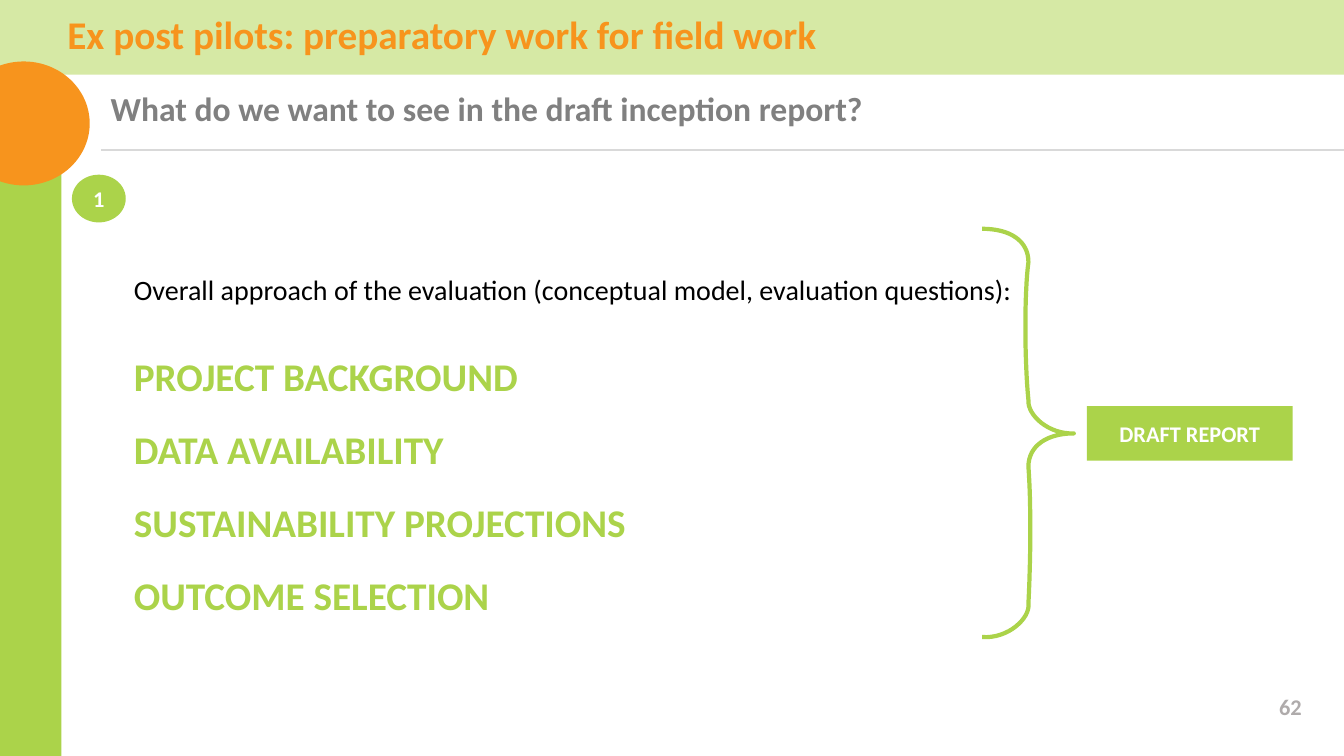
from lxml.etree import SubElement
from pptx import Presentation
from pptx.dml.color import RGBColor
from pptx.enum.shapes import MSO_CONNECTOR, MSO_SHAPE
from pptx.enum.text import MSO_ANCHOR, PP_ALIGN
from pptx.oxml.ns import qn
from pptx.util import Inches, Pt

GREEN, PALE_GREEN, ORANGE = "ABD34A", "D6E9A5", "F7941D"
GREY, LIGHT_GREY, RULE_GREY = "808080", "AFABAB", "D9D9D9"
WHITE, BLACK = "FFFFFF", "000000"
FONT = "Calibri"
SLIDE_WIDTH, SLIDE_HEIGHT = 13.33, 7.5

TITLE = "Ex post pilots: preparatory work for field work"
SUBTITLE = "What do we want to see in the draft inception report?"
APPROACH = "Overall approach of the evaluation (conceptual model, evaluation questions):"
TOPICS = [
    "PROJECT BACKGROUND",
    "DATA AVAILABILITY",
    "SUSTAINABILITY PROJECTIONS",
    "OUTCOME SELECTION",
]
FIRST_TOPIC_GAP, TOPIC_GAP = 33, 18.7

BRACE_START = (9.74, 2.27)
# Each Bezier curve: two control points, then the end point
BRACE_CURVES = [
    ((10.02, 2.27), (10.2, 2.39), (10.2, 2.6)),
    ((10.16, 2.9), (10.16, 3.56), (10.2, 3.97)),
    ((10.19, 4.12), (10.4, 4.31), (10.65, 4.3)),
    ((10.39, 4.3), (10.2, 4.42), (10.2, 4.63)),
    ((10.22, 4.89), (10.23, 5.39), (10.2, 5.99)),
    ((10.22, 6.13), (10, 6.34), (9.74, 6.32)),
]
CURVE_STEPS = 16


def color(hex_string):
    return RGBColor.from_string(hex_string)


def add_run(paragraph, text, size, text_color, bold=True):
    run = paragraph.add_run()
    run.text = text
    run.font.name = FONT
    run.font.size = Pt(size)
    run.font.bold = bold
    run.font.color.rgb = color(text_color)


def add_block(kind, left, top, width, height, fill, label=None):
    """Add a plain filled shape, with a centred white label if one is given."""
    shape = slide.shapes.add_shape(
        kind, Inches(left), Inches(top), Inches(width), Inches(height))
    shape.shadow.inherit = False
    shape.fill.solid()
    shape.fill.fore_color.rgb = color(fill)
    shape.line.fill.background()
    if label:
        shape.text_frame.vertical_anchor = MSO_ANCHOR.MIDDLE
        paragraph = shape.text_frame.paragraphs[0]
        paragraph.alignment = PP_ALIGN.CENTER
        add_run(paragraph, label, 16, WHITE)
    return shape


def add_text_frame(left, top, width, height):
    box = slide.shapes.add_textbox(
        Inches(left), Inches(top), Inches(width), Inches(height))
    box.text_frame.word_wrap = True
    return box.text_frame


def add_heading(text, size, text_color, *place):
    paragraph = add_text_frame(*place).paragraphs[0]
    paragraph.line_spacing = 0.9
    add_run(paragraph, text, size, text_color)


def curve_points(start, first, second, end):
    """Return points along a cubic Bezier curve, without its start."""
    points = []
    for step in range(1, CURVE_STEPS + 1):
        t = step / CURVE_STEPS
        weights = ((1 - t) ** 3, 3 * t * (1 - t) ** 2, 3 * t * t * (1 - t), t ** 3)
        points.append(tuple(
            Inches(sum(weight * value for weight, value in zip(weights, values)))
            for values in zip(start, first, second, end)))
    return points


def add_brace():
    builder = slide.shapes.build_freeform(*(Inches(value) for value in BRACE_START))
    start = BRACE_START
    for curve in BRACE_CURVES:
        builder.add_line_segments(curve_points(start, *curve), close=False)
        start = curve[-1]
    brace = builder.convert_to_shape()
    brace.shadow.inherit = False
    brace.fill.background()
    brace.line.color.rgb = color(GREEN)
    brace.line.width = Pt(3)


presentation = Presentation()
presentation.slide_width = Inches(SLIDE_WIDTH)
presentation.slide_height = Inches(SLIDE_HEIGHT)
slide = presentation.slides.add_slide(presentation.slide_layouts[6])

# Frame and headings
add_block(MSO_SHAPE.RECTANGLE, 0, 0, 0.61, SLIDE_HEIGHT, GREEN)
add_block(MSO_SHAPE.RECTANGLE, 0, 0, SLIDE_WIDTH, 0.74, PALE_GREEN)
add_heading(SUBTITLE, 24, GREY, 1, 0.87, 12.33, 0.46)
rule = slide.shapes.add_connector(
    MSO_CONNECTOR.STRAIGHT, Inches(1), Inches(1.49), Inches(SLIDE_WIDTH), Inches(1.49))
rule.line.color.rgb = color(RULE_GREY)
rule.line.width = Pt(1.5)
SubElement(rule._element.spPr, qn("a:effectLst"))
add_heading(TITLE, 28, ORANGE, 0.57, 0.11, 10.54, 0.64)
add_block(MSO_SHAPE.OVAL, -0.42, 0.61, 1.31, 1.23, ORANGE)

# Report contents
contents = add_text_frame(1.23, 2.65, 9.01, 3.59)
add_run(contents.paragraphs[0], APPROACH, 20, BLACK, bold=False)
for index, topic in enumerate(TOPICS):
    topic_paragraph = contents.add_paragraph()
    topic_paragraph.space_before = Pt(TOPIC_GAP if index else FIRST_TOPIC_GAP)
    add_run(topic_paragraph, topic, 28, GREEN)

add_brace()
add_block(MSO_SHAPE.RECTANGLE, 10.78, 4.03, 2.04, 0.54, GREEN, "DRAFT REPORT")
badge = add_block(MSO_SHAPE.OVAL, 0.72, 1.74, 0.52, 0.46, GREEN, "1")
badge.line.color.rgb = color(GREEN)
badge.line.width = Pt(1)

# Page number
page_number = add_text_frame(12.1, 6.81, 0.91, 0.4)
page_number.vertical_anchor = MSO_ANCHOR.MIDDLE
page_number.paragraphs[0].alignment = PP_ALIGN.RIGHT
add_run(page_number.paragraphs[0], "62", 16, LIGHT_GREY)

presentation.save("out.pptx")
